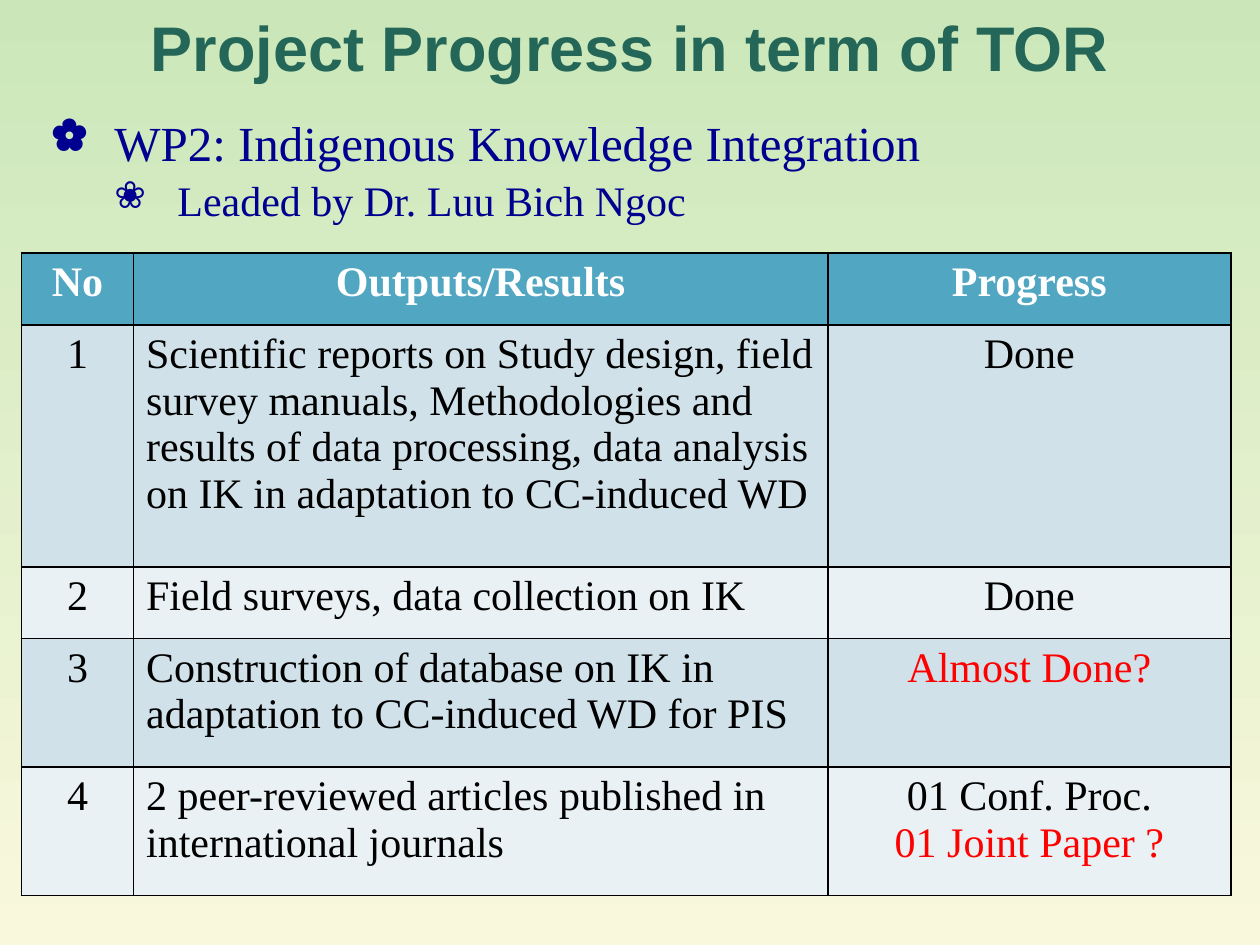
from dataclasses import dataclass

import pptx
import pptx.dml.color
import pptx.enum.text
import pptx.oxml.ns
import pptx.util
from lxml import etree

Inches = pptx.util.Inches
Align = pptx.enum.text.PP_ALIGN
Anchor = pptx.enum.text.MSO_ANCHOR


@dataclass(frozen=True)
class Theme:
    heading_font: str = "Arial"
    body_font: str = "Times New Roman"
    title_size: int = 36
    lead_size: int = 28
    body_size: int = 24
    sky: str = "CBE7B9"
    sand: str = "F9F8DD"
    title: str = "246657"
    lead: str = "000090"
    header: str = "51A6C2"
    bands: tuple = ("D0E1E9", "E9F1F4")
    white: str = "FFFFFF"
    black: str = "000000"
    alert: str = "FF0000"


def rgb(value):
    return pptx.dml.color.RGBColor.from_string(value)


def add_element(parent, tag, **attributes):
    return etree.SubElement(parent, pptx.oxml.ns.qn(tag), attributes)


class SlideBuilder:
    def __init__(self, slide, theme):
        self.slide = slide
        self.theme = theme

    def background(self):
        fill = self.slide.background.fill
        fill.gradient()
        fill.gradient_angle = 270
        for stop, color, position in zip(
            fill.gradient_stops, (self.theme.sky, self.theme.sand), (0, 1)
        ):
            stop.color.rgb = rgb(color)
            stop.position = position

    def run(self, paragraph, text, size, color, bold=False, font=None):
        run = paragraph.add_run()
        run.text = text
        run.font.name = font or self.theme.body_font
        run.font.size = pptx.util.Pt(size)
        run.font.bold = bold
        run.font.color.rgb = rgb(color)

    def text_frame(self, left, top, width, height):
        box = self.slide.shapes.add_textbox(
            Inches(left), Inches(top), Inches(width), Inches(height)
        )
        box.text_frame.word_wrap = True
        return box.text_frame

    def title(self, text):
        frame = self.text_frame(0.5, 0.11, 9, 0.57)
        frame.vertical_anchor = Anchor.MIDDLE
        paragraph = frame.paragraphs[0]
        paragraph.alignment = Align.CENTER
        paragraph.line_spacing = 0.95
        self.run(paragraph, text, self.theme.title_size, self.theme.title,
                 bold=True, font=self.theme.heading_font)

    def bullets(self, items):
        """Each item is (bullet character, text, size); each goes one level deeper."""
        frame = self.text_frame(0.31, 0.81, 9.19, 1.06)
        frame.margin_top = Inches(0.08)
        for level, (character, text, size) in enumerate(items):
            paragraph = frame.add_paragraph() if level else frame.paragraphs[0]
            properties = paragraph._p.get_or_add_pPr()
            properties.set("marL", str(Inches(0.5 * (level + 1))))
            properties.set("indent", str(Inches(-0.5)))
            add_element(properties, "a:buSzPct", val="90000")
            add_element(properties, "a:buChar", char=character)
            paragraph.level = level
            if level:
                paragraph.space_before = pptx.util.Pt(2)
            self.run(paragraph, text, size, self.theme.lead)

    def cell_borders(self, cell):
        properties = cell._tc.get_or_add_tcPr()
        for index, side in enumerate(("L", "R", "T", "B")):
            line = add_element(properties, f"a:ln{side}", w=str(pptx.util.Pt(1)))
            fill = add_element(line, "a:solidFill")
            add_element(fill, "a:srgbClr", val=self.theme.black)
            properties.insert(index, line)

    def cell(self, cell, lines, fill, alignment, color, bold):
        cell.fill.solid()
        cell.fill.fore_color.rgb = rgb(fill)
        self.cell_borders(cell)
        for index, text in enumerate(lines):
            frame = cell.text_frame
            paragraph = frame.add_paragraph() if index else frame.paragraphs[0]
            paragraph.alignment = alignment
            # Open questions stand out
            line_color = self.theme.alert if text.endswith("?") else color
            self.run(paragraph, text, self.theme.body_size, line_color, bold)

    def table(self, rows, column_widths, row_heights):
        table = self.slide.shapes.add_table(
            len(rows), len(column_widths), Inches(0.17), Inches(2.01),
            Inches(sum(column_widths)), Inches(sum(row_heights)),
        ).table
        for column, width in zip(table.columns, column_widths):
            column.width = Inches(width)
        for row, height in zip(table.rows, row_heights):
            row.height = Inches(height)
        for r, row in enumerate(rows):
            header = r == 0
            fill = self.theme.header if header else self.theme.bands[(r - 1) % 2]
            color = self.theme.white if header else self.theme.black
            for c, text in enumerate(row):
                left = c == 1 and not header
                self.cell(table.cell(r, c), text.split("\n"), fill,
                          Align.LEFT if left else Align.CENTER, color, header)


def main():
    theme = Theme()
    presentation = pptx.Presentation()
    presentation.slide_width = Inches(10)
    presentation.slide_height = Inches(7.5)
    slide = presentation.slides.add_slide(presentation.slide_layouts[6])
    builder = SlideBuilder(slide, theme)

    builder.background()
    builder.title("Project Progress in term of TOR")
    outputs = [
        ("No", "Outputs/Results", "Progress"),
        ("1", "Scientific reports on Study design, field survey manuals, "
              "Methodologies and results of data processing, data analysis "
              "on IK in adaptation to CC-induced WD", "Done"),
        ("2", "Field surveys, data collection on IK", "Done"),
        ("3", "Construction of database on IK in adaptation to CC-induced WD "
              "for PIS", "Almost Done?"),
        ("4", "2 peer-reviewed articles published in international journals",
         "01 Conf. Proc.\n01 Joint Paper ?"),
    ]
    builder.table(outputs, (0.89, 5.51, 3.2), (0.57, 1.92, 0.57, 1.02, 1.02))
    builder.bullets([
        ("✿", "WP2: Indigenous Knowledge Integration", theme.lead_size),
        ("❀", "Leaded by Dr. Luu Bich Ngoc", theme.body_size),
    ])
    presentation.save("out.pptx")


if __name__ == "__main__":
    main()
